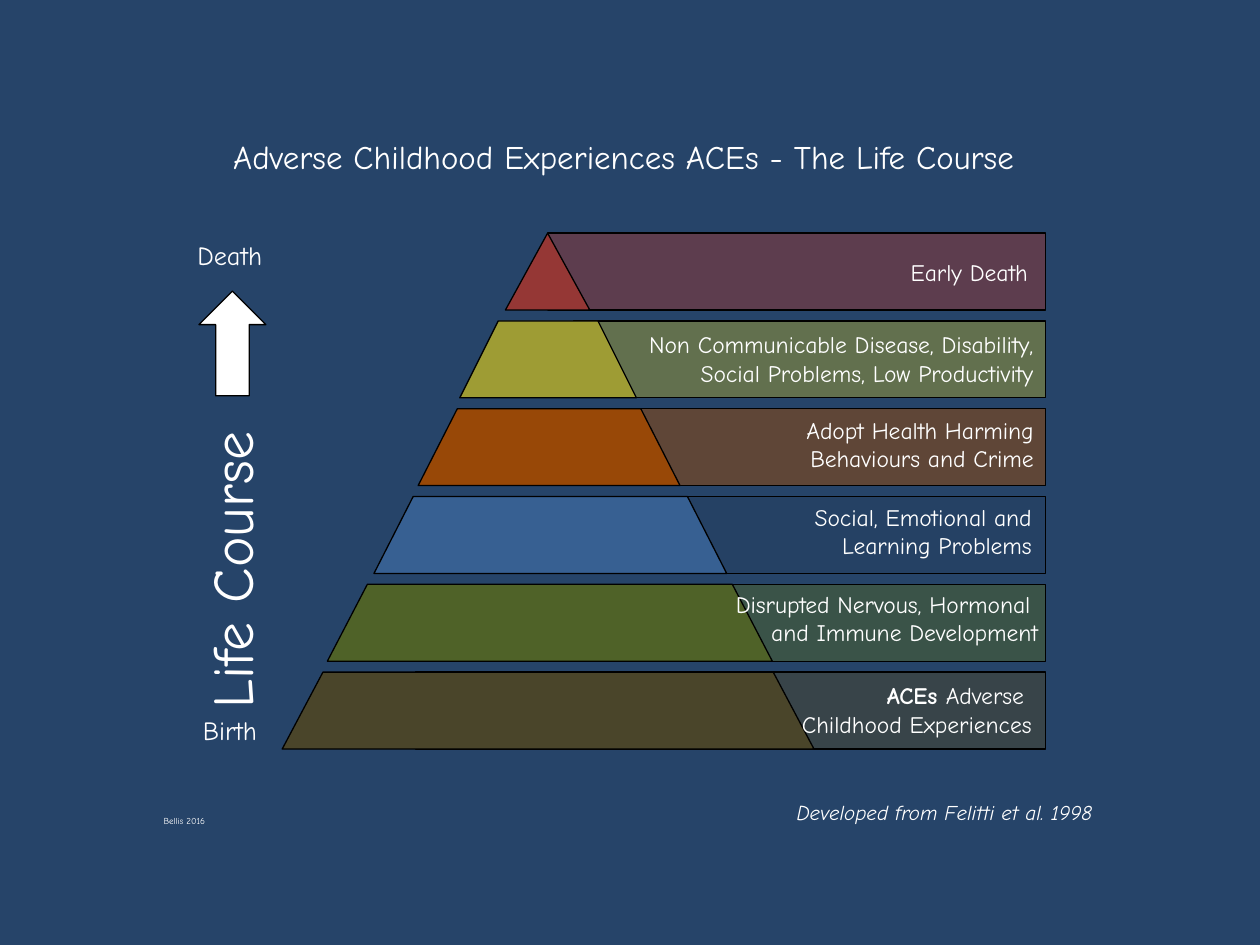
from lxml.etree import SubElement
from pptx import Presentation
from pptx.dml.color import RGBColor
from pptx.enum.shapes import MSO_SHAPE
from pptx.enum.text import MSO_AUTO_SIZE, PP_ALIGN
from pptx.oxml.ns import qn
from pptx.util import Cm, Pt

NAVY = RGBColor(0x26, 0x44, 0x69)
WHITE = RGBColor(0xFF, 0xFF, 0xFF)
BLACK = RGBColor(0x00, 0x00, 0x00)
RED = RGBColor(0x95, 0x37, 0x35)
OLIVE = RGBColor(0x9E, 0x9C, 0x34)
ORANGE = RGBColor(0x98, 0x48, 0x07)
BLUE = RGBColor(0x37, 0x60, 0x92)
DARK_BLUE = RGBColor(0x25, 0x40, 0x61)
GREEN = RGBColor(0x4F, 0x62, 0x28)
BROWN = RGBColor(0x4A, 0x45, 0x2A)

FONT = "Comic Neue"
FIRST_TOP, ROW_PITCH, ROW_HEIGHT = 4.7, 1.77, 1.55
BAR_RIGHT = 21.08

presentation = Presentation()
presentation.slide_width = Cm(25.4)
presentation.slide_height = Cm(19.05)
slide = presentation.slides.add_slide(presentation.slide_layouts[6])
slide.background.fill.solid()
slide.background.fill.fore_color.rgb = NAVY


def add_outlined_shape(kind, left, top, width, height, color, opacity=100):
    shape = slide.shapes.add_shape(kind, Cm(left), Cm(top), Cm(width), Cm(height))
    shape.shadow.inherit = False
    shape.fill.solid()
    shape.fill.fore_color.rgb = color
    shape.line.color.rgb = BLACK
    shape.line.width = Pt(0.75)
    if opacity < 100:
        color_element = shape._element.spPr.find(qn("a:solidFill"))[0]
        SubElement(color_element, qn("a:alpha"), val=str(opacity * 1000))
    return shape


def add_label(text, left, top, width, height, size, align=PP_ALIGN.LEFT, wrap=False):
    box = slide.shapes.add_textbox(Cm(left), Cm(top), Cm(width), Cm(height))
    text_frame = box.text_frame
    text_frame.text = text
    text_frame.word_wrap = wrap
    text_frame.auto_size = MSO_AUTO_SIZE.SHAPE_TO_FIT_TEXT
    for paragraph in text_frame.paragraphs:
        paragraph.alignment = align
        for run in paragraph.runs:
            run.font.name = FONT
            run.font.size = Pt(size)
            run.font.color.rgb = WHITE
    return box


# Pyramid levels from top to bottom:
# bar left, bar colour, level left, level width, level colour, slant
levels = [
    (11.05, RED, 10.19, 1.7, RED, None),
    (11.56, OLIVE, 9.27, 3.56, OLIVE, 0.5),
    (10.74, ORANGE, 8.43, 5.28, ORANGE, 0.51),
    (10.74, DARK_BLUE, 7.54, 7.11, BLUE, 0.51),
    (10.49, GREEN, 6.6, 8.97, GREEN, 0.52),
    (8.38, BROWN, 5.69, 10.72, BROWN, 0.53),
]
for row, (bar_left, bar_color, left, width, color, slant) in enumerate(levels):
    top = FIRST_TOP + row * ROW_PITCH
    add_outlined_shape(MSO_SHAPE.RECTANGLE, bar_left, top,
                       BAR_RIGHT - bar_left, ROW_HEIGHT, bar_color, opacity=50)
    kind = MSO_SHAPE.TRAPEZOID if slant else MSO_SHAPE.ISOSCELES_TRIANGLE
    level = add_outlined_shape(kind, left, top, width, ROW_HEIGHT, color)
    if slant:
        level.adjustments[0] = slant

# Level descriptions
add_label("Early Death", 18.11, 5.08, 3.18, 0.84, 13.5)
descriptions = [
    ("Non Communicable Disease, Disability, Social Problems, Low Productivity",
     11.89, 6.53, 9.19),
    ("Adopt Health Harming Behaviours and Crime", 13.77, 8.26, 7.32),
    ("Social, Emotional and Learning Problems", 14.27, 10.01, 6.78),
    ("Disrupted Nervous, Hormonal \nand Immune Development", 13.97, 11.76, 7.21),
]
for text, left, top, width in descriptions:
    add_label(text, left, top, width, 1.42, 13.5, PP_ALIGN.RIGHT, wrap=True)

aces = add_label("ACEs \nChildhood Experiences", 15.49, 13.61, 5.56, 1.42, 13.5,
                 PP_ALIGN.RIGHT)
first_line = aces.text_frame.paragraphs[0]
first_line.runs[0].font.bold = True
adverse = first_line.add_run()
adverse.text = "Adverse "
adverse.font.name = FONT
adverse.font.size = Pt(13.5)
adverse.font.color.rgb = WHITE

# Title
add_label("Adverse Childhood Experiences ACEs - The Life Course",
          3.68, 2.62, 17.81, 1.07, 18.8, PP_ALIGN.CENTER)

# Life course axis
life_course = add_label("Life Course", -0.51, 8.51, 10.36, 1.68, 33, wrap=True)
life_course.rotation = 270
arrow = add_outlined_shape(MSO_SHAPE.LEFT_ARROW, 3.63, 6.25, 2.11, 1.35, WHITE)
arrow.rotation = 90
add_label("Death", 3.73, 4.7, 2.03, 0.89, 15)
add_label("Birth", 3.84, 14.27, 1.83, 0.89, 15)

# Credits
source = add_label("Developed from Felitti et al. 1998", 14.99, 16, 7.29, 0.76, 12,
                   PP_ALIGN.RIGHT)
source.text_frame.paragraphs[0].runs[0].font.italic = True
add_label("Bellis 2016", 3.05, 16.31, 1.47, 0.48, 5.2)

presentation.save("out.pptx")
